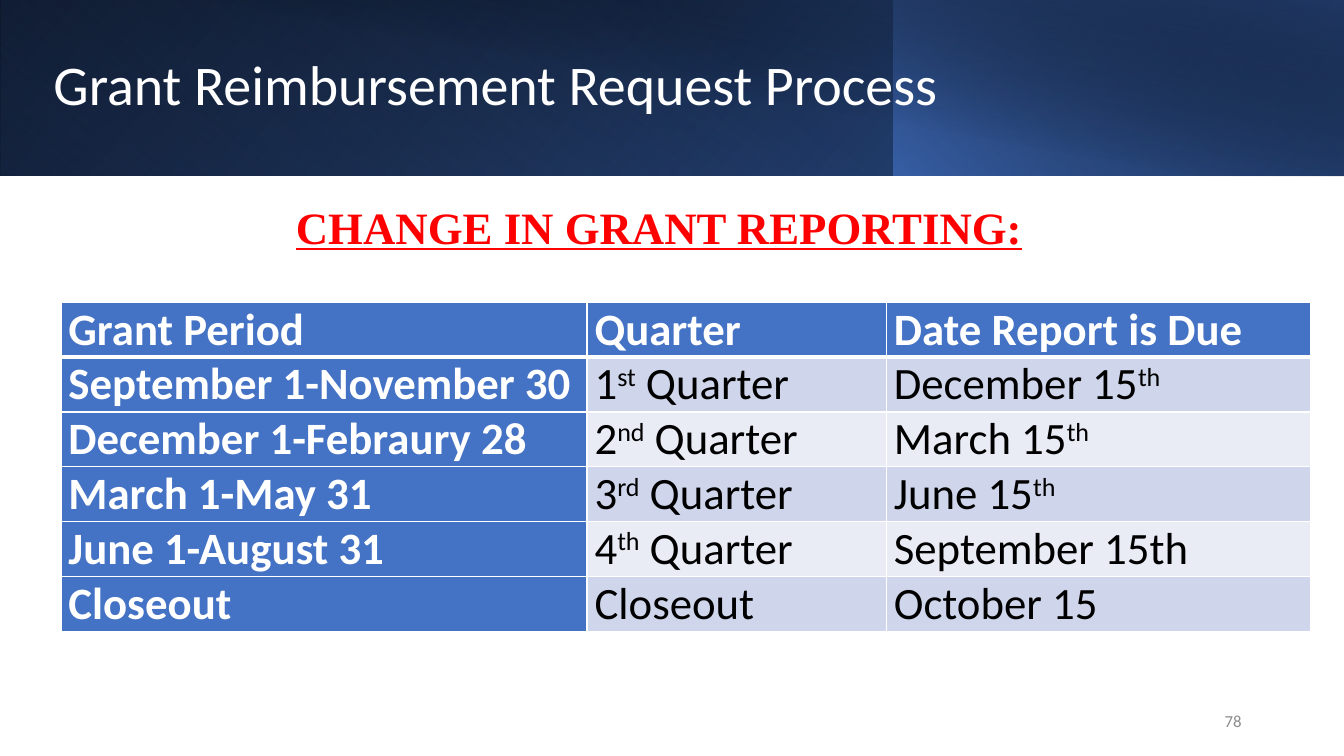
from lxml.etree import SubElement
from pptx import Presentation
from pptx.dml.color import RGBColor
from pptx.enum.shapes import MSO_SHAPE
from pptx.enum.text import MSO_ANCHOR, MSO_AUTO_SIZE, PP_ALIGN
from pptx.oxml.ns import qn
from pptx.util import Pt

COLORS = {
    "white": "FFFFFF",
    "black": "000000",
    "red": "FF0000",
    "gray": "8C8C8C",
    "blue": "4472C4",
    "deep": "2F5597",
    "navy": "203864",
    "dark": "CFD5EA",
    "light": "E9EBF5",
}

BANDS = [
    ((0, 0, 960, 125.3), 140, [(0, "black", 100), (100, "deep", 100)], True, 0),
    ((0, 0, 639.4, 125.3), 230, [(20, "blue", 0), (100, "navy", 55)], True, 180),
    ((638.6, 0, 321.4, 125.3), 220, [(0, "blue", 66), (100, "black", 30)], True, 0),
    ((36, 0, 924, 126), 280, [(50, "black", 0), (99, "navy", 52)], False, 0),
]

ROWS = [
    ("Grant Period", "Quarter", "Date Report is Due"),
    ("September 1-November 30", "1^st^ Quarter", "December 15^th^"),
    ("December 1-Febraury 28", "2^nd^ Quarter", "March 15^th^"),
    ("March 1-May 31", "3^rd^ Quarter", "June 15^th^"),
    ("June 1-August 31", "4^th^ Quarter", "September 15th"),
    ("Closeout", "Closeout", "October 15"),
]
WIDTHS = (375.8, 213.8, 303.1)
HIGH = 39.1


def tint(name):
    return RGBColor.from_string(COLORS[name])


def write(frame, text, size=32, color="black", font="Calibri", bold=False,
          line=False, align=PP_ALIGN.LEFT, lead=1.0):
    para = frame.paragraphs[0]
    para.alignment = align
    para.line_spacing = lead
    para.space_before = Pt(0)
    for i, part in enumerate(text.split("^")):
        if not part:
            continue
        run = para.add_run()
        run.text = part
        run.font.size = Pt(size)
        run.font.name = font
        run.font.bold = bold
        run.font.underline = line
        run.font.color.rgb = tint(color)
        if i % 2:
            run.font._element.set("baseline", "30000")
    return para


def place(shape, box):
    shape.left, shape.top, shape.width, shape.height = map(Pt, box)
    frame = shape.text_frame
    frame.word_wrap = True
    frame.auto_size = MSO_AUTO_SIZE.NONE
    return frame


def add_band(slide, box, angle, stops, flip, turn):
    band = slide.shapes.add_shape(MSO_SHAPE.RECTANGLE, *map(Pt, box))
    band.shadow.inherit = False
    band.line.fill.background()
    band.rotation = turn
    if flip:
        band._element.spPr.get_or_add_xfrm().set("flipH", "1")
    band.fill.gradient()
    grad = band._element.spPr.find(qn("a:gradFill"))
    for child in list(grad):
        grad.remove(child)
    items = SubElement(grad, qn("a:gsLst"))
    for spot, name, alpha in stops:
        stop = SubElement(items, qn("a:gs"), pos=str(spot * 1000))
        color = SubElement(stop, qn("a:srgbClr"), val=COLORS[name])
        if alpha < 100:
            SubElement(color, qn("a:alpha"), val=str(alpha * 1000))
    SubElement(grad, qn("a:lin"), ang=str(angle * 60000), scaled="0")


def add_edge(cell, side, width):
    edge = SubElement(cell._tc.get_or_add_tcPr(), qn("a:" + side), w=str(Pt(width)))
    fill = SubElement(edge, qn("a:solidFill"))
    SubElement(fill, qn("a:srgbClr"), val=COLORS["white"])


def add_grid(slide):
    table = slide.shapes.add_table(
        len(ROWS), len(WIDTHS), Pt(43.5), Pt(216),
        Pt(sum(WIDTHS)), Pt(HIGH * len(ROWS))).table
    for col, width in zip(table.columns, WIDTHS):
        col.width = Pt(width)
    for r, texts in enumerate(ROWS):
        table.rows[r].height = Pt(HIGH)
        for c, text in enumerate(texts):
            cell = table.cell(r, c)
            cell.margin_left = cell.margin_right = Pt(5.4)
            cell.margin_top = cell.margin_bottom = Pt(0)
            head = r == 0 or c == 0
            for side in ("lnL", "lnR", "lnT", "lnB"):
                thick = (r, side) in ((0, "lnB"), (1, "lnT"))
                add_edge(cell, side, 3 if thick else 1)
            cell.fill.solid()
            cell.fill.fore_color.rgb = tint(
                "blue" if head else "dark" if r % 2 else "light")
            write(cell.text_frame, text, bold=head, align=PP_ALIGN.JUSTIFY,
                  color="white" if head else "black")


def main():
    deck = Presentation()
    deck.slide_width, deck.slide_height = Pt(960), Pt(540)
    slide = deck.slides.add_slide(deck.slide_layouts[1])
    title, body = slide.placeholders
    for band in BANDS:
        add_band(slide, *band)
    for shape in (title, body):
        slide.shapes._spTree.append(shape._element)

    frame = place(title, (31, 21.6, 779, 81.4))
    frame.vertical_anchor = MSO_ANCHOR.MIDDLE
    write(frame, "Grant Reimbursement Request Process", size=40,
          color="white", lead=0.9)

    frame = place(body, (44.6, 143.3, 852.5, 58.3))
    para = write(frame, "CHANGE IN GRANT REPORTING:", color="red",
                 font="Times New Roman", bold=True, line=True,
                 align=PP_ALIGN.CENTER, lead=0.9)
    props = para._p.get_or_add_pPr()
    props.set("marL", "0")
    props.set("indent", "0")
    SubElement(props, qn("a:buNone"))

    add_grid(slide)

    page = slide.shapes.add_textbox(Pt(678), Pt(500.5), Pt(216), Pt(28.8))
    frame = page.text_frame
    frame.word_wrap = True
    frame.vertical_anchor = MSO_ANCHOR.MIDDLE
    write(frame, "78", size=12, color="gray", align=PP_ALIGN.RIGHT)

    deck.save("out.pptx")


if __name__ == "__main__":
    main()
